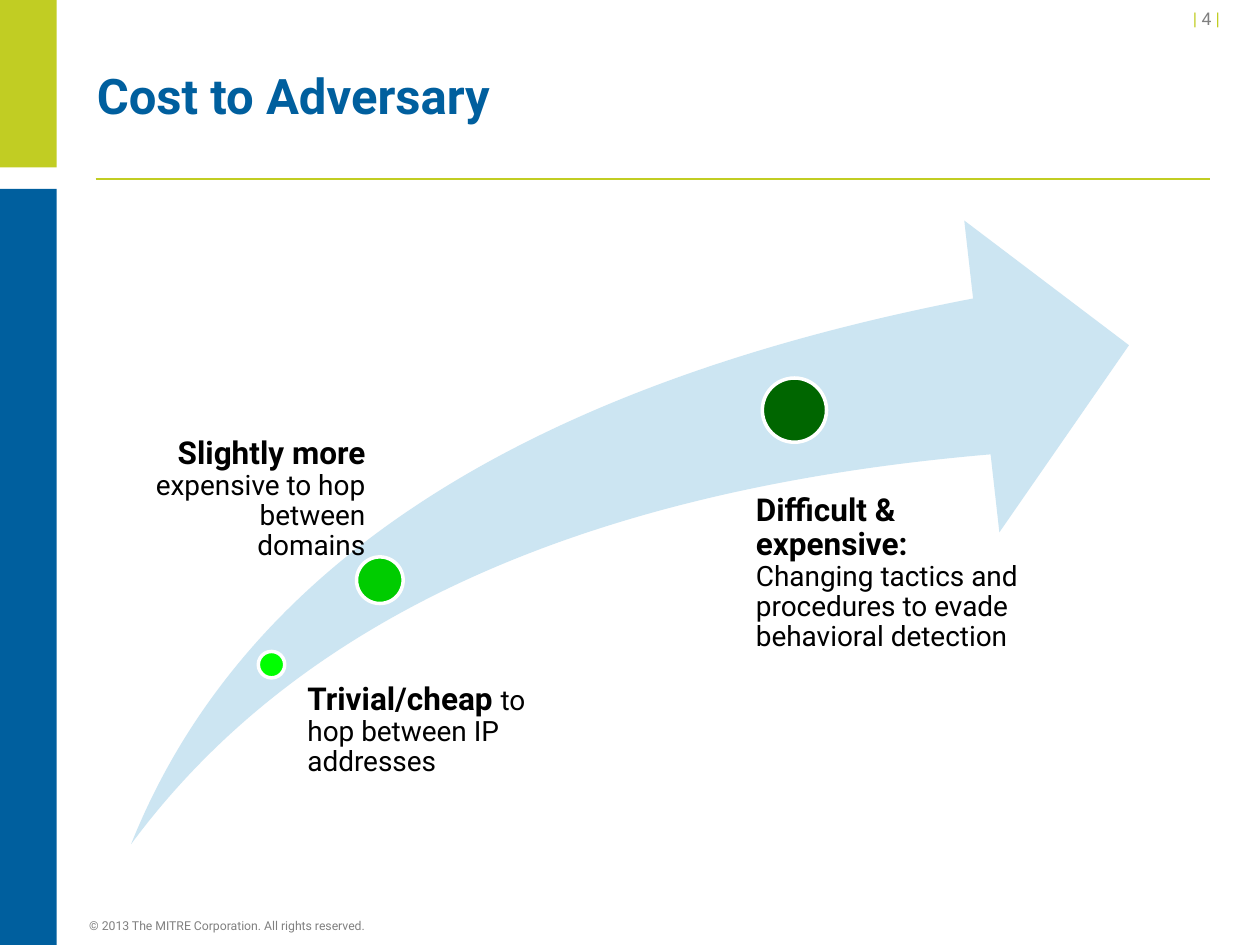
from pptx import Presentation
from pptx.dml.color import RGBColor
from pptx.enum.shapes import MSO_CONNECTOR, MSO_SHAPE
from pptx.enum.text import MSO_ANCHOR, PP_ALIGN
from pptx.oxml.ns import qn
from pptx.util import Inches, Pt
from lxml import etree

LIME = RGBColor(0xC1, 0xCD, 0x23)
BLUE = RGBColor(0x00, 0x5F, 0x9E)
PALE_BLUE = RGBColor(0xCC, 0xE5, 0xF2)
GRAY = RGBColor(0x80, 0x80, 0x80)
BLACK = RGBColor(0x00, 0x00, 0x00)
WHITE = RGBColor(0xFF, 0xFF, 0xFF)
BRIGHT_GREEN = RGBColor(0x00, 0xFF, 0x00)
MID_GREEN = RGBColor(0x00, 0xCC, 0x00)
DARK_GREEN = RGBColor(0x00, 0x66, 0x00)
RECTANGLE, OVAL, SWOOSH = MSO_SHAPE.RECTANGLE, MSO_SHAPE.OVAL, MSO_SHAPE.SWOOSH_ARROW
LEFT, RIGHT = PP_ALIGN.LEFT, PP_ALIGN.RIGHT
TOP, MIDDLE, BOTTOM = MSO_ANCHOR.TOP, MSO_ANCHOR.MIDDLE, MSO_ANCHOR.BOTTOM
FONT = "Roboto"
DEFAULT_INSETS = (0.1, 0.05, 0.1, 0.05)

TITLE = "Cost to Adversary"
COPYRIGHT = "© 2013 The MITRE Corporation. All rights reserved."
PAGE_NUMBER = [("| ", LIME), ("4 ", GRAY), ("|", LIME)]
SIDE_BARS = [((0, 0, 0.45, 1.33), LIME), ((0, 1.5, 0.45, 6), BLUE)]
STAGES = [
    {"dot": (2.05, 5.17, 0.21), "color": BRIGHT_GREEN, "area": (2.33, 5.42, 1.85, 0.86),
     "inset": 0.11, "align": LEFT, "lead": "Trivial/cheap ",
     "detail": "to hop between IP addresses"},
    {"dot": (2.83, 4.42, 0.37), "color": MID_GREEN, "area": (1, 3.47, 1.9, 1.03),
     "inset": 0.2, "align": RIGHT, "lead": "Slightly more ",
     "detail": "expensive to hop between domains"},
    {"dot": (6.05, 3, 0.51), "color": DARK_GREEN, "area": (5.73, 3.92, 2.43, 2.13),
     "inset": 0.27, "align": LEFT, "lead": "Difficult & expensive: ",
     "detail": "Changing tactics and procedures to evade behavioral detection"},
]


def add_text(page, area, spans, align=LEFT, anchor=TOP, insets=DEFAULT_INSETS, spacing=None):
    box = page.shapes.add_textbox(*map(Inches, area))
    frame = box.text_frame
    frame.word_wrap = True
    frame.vertical_anchor = anchor
    (frame.margin_left, frame.margin_top,
     frame.margin_right, frame.margin_bottom) = map(Inches, insets)
    para = frame.paragraphs[0]
    para.alignment = align
    para.line_spacing = spacing
    for text, size, color, bold in spans:
        span = para.add_run()
        span.text = text
        span.font.name = FONT
        span.font.size = Pt(size)
        span.font.color.rgb = color
        span.font.bold = bold
    return box


def add_filled(page, kind, area, color, outline=None):
    shape = page.shapes.add_shape(kind, *map(Inches, area))
    shape.shadow.inherit = False
    shape.fill.solid()
    shape.fill.fore_color.rgb = color
    if outline is None:
        shape.line.fill.background()
    else:
        shape.line.color.rgb = outline
        shape.line.width = Pt(2)
    return shape


def add_rule(page, left, right, y):
    rule = page.shapes.add_connector(
        MSO_CONNECTOR.STRAIGHT, Inches(left), Inches(y), Inches(right), Inches(y))
    rule.line.color.rgb = LIME
    rule.line.width = Pt(1)
    etree.SubElement(rule._element.spPr, qn("a:effectLst"))


def main():
    deck = Presentation()
    deck.slide_width, deck.slide_height = Inches(10), Inches(7.5)
    page = deck.slides.add_slide(deck.slide_layouts[6])

    for area, color in SIDE_BARS:
        add_filled(page, RECTANGLE, area, color)
    add_rule(page, 0.76, 9.6, 1.42)
    add_text(page, (0.61, 7.15, 7.58, 0.3), [(COPYRIGHT, 7, GRAY, False)],
             anchor=BOTTOM, spacing=Pt(13))
    add_text(page, (0.67, 0.25, 9, 1.03), [(TITLE, 28, BLUE, True)],
             anchor=MIDDLE, spacing=Pt(32))

    arrow = add_filled(page, SWOOSH, (1.04, 1.75, 7.92, 4.95), PALE_BLUE)
    arrow.adjustments[0] = arrow.adjustments[1] = 0.25
    for stage in STAGES:
        left, top, size = stage["dot"]
        add_filled(page, OVAL, (left, top, size, size), stage["color"], outline=WHITE)
        add_text(page, stage["area"],
                 [(stage["lead"], 18, BLACK, True), (stage["detail"], 16, BLACK, False)],
                 align=stage["align"], insets=(stage["inset"], 0, 0, 0), spacing=0.9)

    add_text(page, (9.24, 0.08, 0.54, 0.2),
             [(text, 10, color, False) for text, color in PAGE_NUMBER],
             align=RIGHT, anchor=BOTTOM)
    deck.save("out.pptx")


if __name__ == "__main__":
    main()
